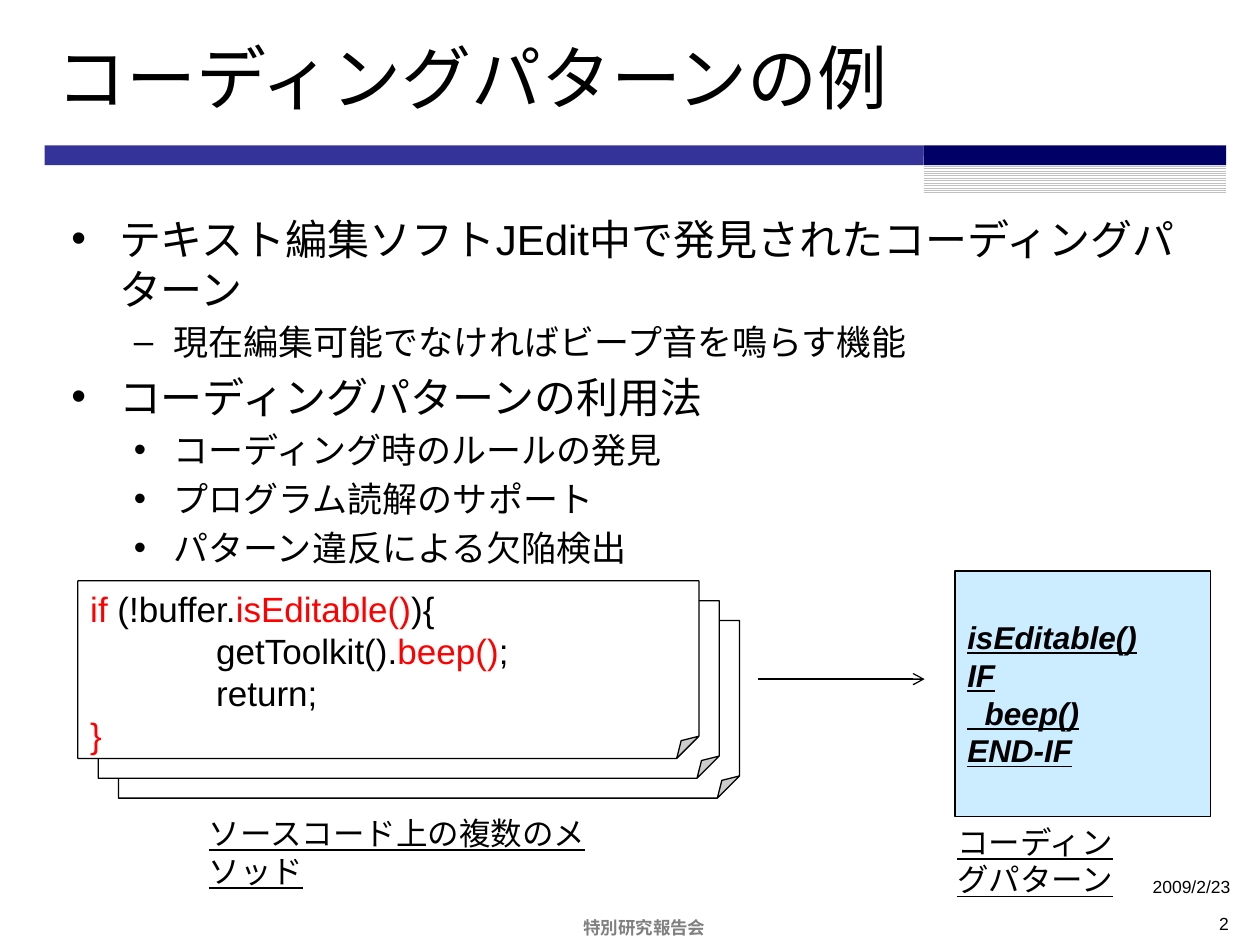
import pptx
import pptx.dml.color
import pptx.enum.dml
import pptx.enum.shapes
import pptx.enum.text
import pptx.util
from lxml import etree

Cm = pptx.util.Cm
Pt = pptx.util.Pt
SHAPE = pptx.enum.shapes.MSO_SHAPE
ANCHOR = pptx.enum.text.MSO_ANCHOR
ALIGN = pptx.enum.text.PP_ALIGN
NS = "http://schemas.openxmlformats.org/drawingml/2006/main"

FONT = "Arial"
BLACK, WHITE, RED, GRAY = "000000", "FFFFFF", "FF0000", "808080"

BULLETS = [
    (0, "•", "テキスト編集ソフトJEdit中で発見されたコーディングパターン"),
    (1, "–", "現在編集可能でなければビープ音を鳴らす機能"),
    (0, "•", "コーディングパターンの利用法"),
    (1, "•", "コーディング時のルールの発見"),
    (1, "•", "プログラム読解のサポート"),
    (1, "•", "パターン違反による欠陥検出"),
]
# level: (font size, left margin in cm, hanging indent in cm)
LEVELS = {0: (24, 0.96, 0.96), 1: (20, 2.06, 0.8)}

CODE = [
    [("if", RED), (" (!buffer.", BLACK), ("isEditable()", RED), ("){", BLACK)],
    [("\tgetToolkit().", BLACK), ("beep()", RED), (";", BLACK)],
    [("\treturn;", BLACK)],
    [("}", RED)],
]
PATTERN = "isEditable()\nIF\n  beep()\nEND-IF"


def rgb(color):
    return pptx.dml.color.RGBColor.from_string(color)


def sub(parent, tag, **attrs):
    return etree.SubElement(parent, f"{{{NS}}}{tag}", attrs)


def style_run(r, size, color=BLACK, bold=False, italic=False, underline=False):
    r.font.name = FONT
    r.font.size = Pt(size)
    r.font.color.rgb = rgb(color)
    r.font.bold = bold
    r.font.italic = italic
    r.font.underline = underline


def set_text(s, text, size, align=ALIGN.LEFT, anchor=ANCHOR.TOP, **style):
    tf = s.text_frame
    tf.text = text
    tf.word_wrap = True
    tf.vertical_anchor = anchor
    for p in tf.paragraphs:
        p.alignment = align
        for r in p.runs:
            style_run(r, size, **style)


def add_text(slide, box, text, size, **options):
    s = slide.shapes.add_textbox(*map(Cm, box))
    set_text(s, text, size, **options)


def add_box(slide, kind, box, fill, line=None):
    s = slide.shapes.add_shape(kind, *map(Cm, box))
    s.shadow.inherit = False
    s.fill.solid()
    s.fill.fore_color.rgb = rgb(fill)
    if line:
        s.line.color.rgb = rgb(line)
        s.line.width = Pt(0.75)
    else:
        s.line.fill.background()
    return s


def add_title_rule(slide):
    add_box(slide, SHAPE.RECTANGLE, (0.9, 2.93, 17.72, 0.4), "333399")
    s = add_box(slide, SHAPE.RECTANGLE, (18.62, 3.15, 6.1, 0.76), WHITE)
    s.fill.patterned()
    s.fill.pattern = pptx.enum.dml.MSO_PATTERN.LIGHT_HORIZONTAL
    s.fill.fore_color.rgb = rgb("C0C0C0")
    s.fill.back_color.rgb = rgb(WHITE)
    add_box(slide, SHAPE.RECTANGLE, (18.62, 2.93, 6.1, 0.4), "000066")


def add_bullets(slide, box):
    tf = slide.shapes.add_textbox(*map(Cm, box)).text_frame
    tf.word_wrap = True
    for i, (level, mark, text) in enumerate(BULLETS):
        size, margin, hanging = LEVELS[level]
        p = tf.paragraphs[0] if i == 0 else tf.add_paragraph()
        p.text = text
        p.level = level
        p.space_before = Pt(0.2 * size if i else 0)
        pPr = p._p.get_or_add_pPr()
        pPr.set("marL", str(Cm(margin)))
        pPr.set("indent", str(-Cm(hanging)))
        sub(pPr, "buFont", typeface=FONT)
        sub(pPr, "buChar", char=mark)
        style_run(p.runs[0], size)


def add_code_cards(slide, left, top):
    """Three stacked cards, the code on the front one."""
    for i in (2, 1, 0):
        box = (left + 0.41 * i, top + 0.4 * i, 12.52, 3.58)
        s = add_box(slide, SHAPE.FOLDED_CORNER, box, WHITE, BLACK)
        guides = s._element.spPr.find(f".//{{{NS}}}avLst")
        sub(guides, "gd", name="adj", fmla="val 12500")
    tf = slide.shapes.add_textbox(Cm(left), Cm(top), Cm(12.7), Cm(3.68)).text_frame
    tf.word_wrap = True
    for i, parts in enumerate(CODE):
        p = tf.paragraphs[0] if i == 0 else tf.add_paragraph()
        tabs = sub(p._p.get_or_add_pPr(), "tabLst")
        sub(tabs, "tab", pos=str(Cm(2.54)), algn="l")
        for text, color in parts:
            r = p.add_run()
            r.text = text
            style_run(r, 20, color)


def add_arrow(slide, x1, x2, y):
    s = slide.shapes.add_connector(
        pptx.enum.shapes.MSO_CONNECTOR.STRAIGHT, Cm(x1), Cm(y), Cm(x2), Cm(y))
    s.line.color.rgb = rgb(BLACK)
    s.line.width = Pt(0.75)
    sub(s.line._get_or_add_ln(), "tailEnd", type="arrow")
    sub(s._element.spPr, "effectLst")


def main():
    prs = pptx.Presentation()
    prs.slide_width, prs.slide_height = Cm(25.4), Cm(19.05)
    slide = prs.slides.add_slide(prs.slide_layouts[6])

    add_title_rule(slide)
    add_text(slide, (0.9, 0.33, 23.82, 2.41), "コーディングパターンの例", 40,
             anchor=ANCHOR.MIDDLE)
    add_bullets(slide, (1.19, 4.17, 22.86, 7.34))

    add_code_cards(slide, 1.57, 11.71)
    add_text(slide, (3.96, 16.28, 8.92, 1.02), "ソースコード上の複数のメソッド", 18,
             underline=True)
    add_arrow(slide, 15.29, 18.64, 13.69)
    s = add_box(slide, SHAPE.RECTANGLE, (19.25, 11.51, 5.16, 4.95), "CCECFF", BLACK)
    set_text(s, PATTERN, 18, anchor=ANCHOR.MIDDLE, bold=True, italic=True,
             underline=True)
    add_text(slide, (19.05, 16.46, 3.99, 1.02), "コーディングパターン", 18,
             underline=True)

    add_text(slide, (11.51, 18.36, 3.05, 0.69), "特別研究報告会", 10,
             anchor=ANCHOR.MIDDLE, color=GRAY, bold=True)
    add_text(slide, (21.11, 17.53, 3.94, 0.79), "2009/2/23", 10, align=ALIGN.RIGHT)
    add_text(slide, (23.5, 18.29, 1.52, 0.76), "2", 10, align=ALIGN.RIGHT)
    prs.save("out.pptx")


if __name__ == "__main__":
    main()
